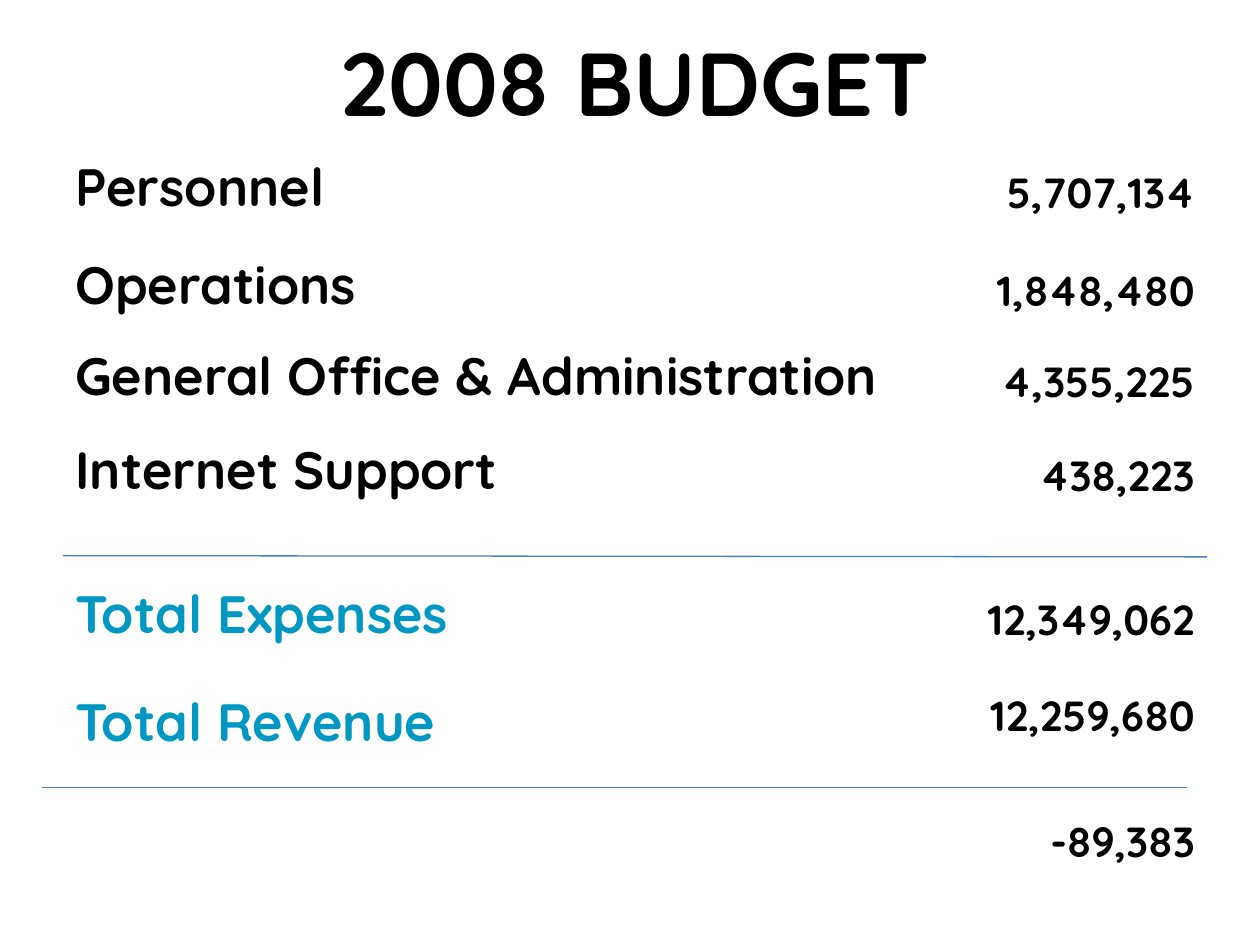
from dataclasses import dataclass

from lxml import etree
from pptx import Presentation
from pptx.dml.color import RGBColor
from pptx.enum import shapes, text
from pptx.oxml.ns import qn
from pptx.util import Inches, Pt

FONT = "Quicksand"
HUES = {"ink": "000000", "total": "0098C3", "rule": "4B7EBC"}
LEFT, RIGHT = 0.5, 7.5
ALIGN = text.PP_ALIGN


@dataclass
class Row:
    label: str
    value: str
    top: float
    wide: float = 3.83
    hue: str = "ink"
    drop: float = 0.1


@dataclass
class Rule:
    left: float
    top: float
    right: float
    end: float


ROWS = [
    Row("Personnel", "5,707,134", 1.17, 2.58),
    Row("Operations", "1,848,480", 1.95, 2.58),
    Row("General Office & Administration", "4,355,225", 2.67, 7.25),
    Row("Internet Support", "438,223", 3.42),
    Row("Total Expenses", "12,349,062", 4.56, hue="total"),
    Row("Total Revenue", "12,259,680", 5.42, hue="total", drop=0),
    Row("", "-89,383", 6.42, drop=0),
]
RULES = [Rule(0.5, 4.41, 9.58, 4.42), Rule(0.33, 6.25, 9.42, 6.25)]


def write(shape, words: str, size: float, hue: str, align) -> None:
    frame = shape.text_frame
    frame.text = words
    frame.word_wrap = True
    frame.auto_size = text.MSO_AUTO_SIZE.SHAPE_TO_FIT_TEXT
    frame.vertical_anchor = text.MSO_ANCHOR.TOP
    line = frame.paragraphs[0]
    line.alignment = align
    font = line.runs[0].font
    font.name, font.size, font.bold = FONT, Pt(size), True
    font.color.rgb = RGBColor.from_string(HUES[hue])


def add_text(slide, words: str, left: float, top: float, wide: float,
             high: float, size: float, hue: str, align) -> None:
    box = slide.shapes.add_textbox(*map(Inches, (left, top, wide, high)))
    write(box, words, size, hue, align)


def add_row(slide, row: Row) -> None:
    if row.label:
        add_text(slide, row.label, LEFT, row.top, row.wide, 0.61, 30,
                 row.hue, ALIGN.LEFT)
    add_text(slide, row.value, RIGHT, row.top + row.drop, 2.08, 0.51, 24,
             "ink", ALIGN.RIGHT)


def add_rule(slide, rule: Rule) -> None:
    ends = map(Inches, (rule.left, rule.top, rule.right, rule.end))
    line = slide.shapes.add_connector(shapes.MSO_CONNECTOR.STRAIGHT, *ends)
    line.line.color.rgb = RGBColor.from_string(HUES["rule"])
    line.line.width = Pt(0.75)
    etree.SubElement(line._element.spPr, qn("a:effectLst"))


def main() -> None:
    deck = Presentation()
    deck.slide_width, deck.slide_height = Inches(10), Inches(7.5)
    slide = deck.slides.add_slide(deck.slide_layouts[5])
    title = slide.shapes.title
    title.left, title.top = Inches(0.33), Inches(0.17)
    title.width, title.height = Inches(9.42), Inches(0.96)
    write(title, "2008 BUDGET", 51, "ink", ALIGN.CENTER)
    for row in ROWS:
        add_row(slide, row)
    for rule in RULES:
        add_rule(slide, rule)
    deck.save("out.pptx")


if __name__ == "__main__":
    main()
